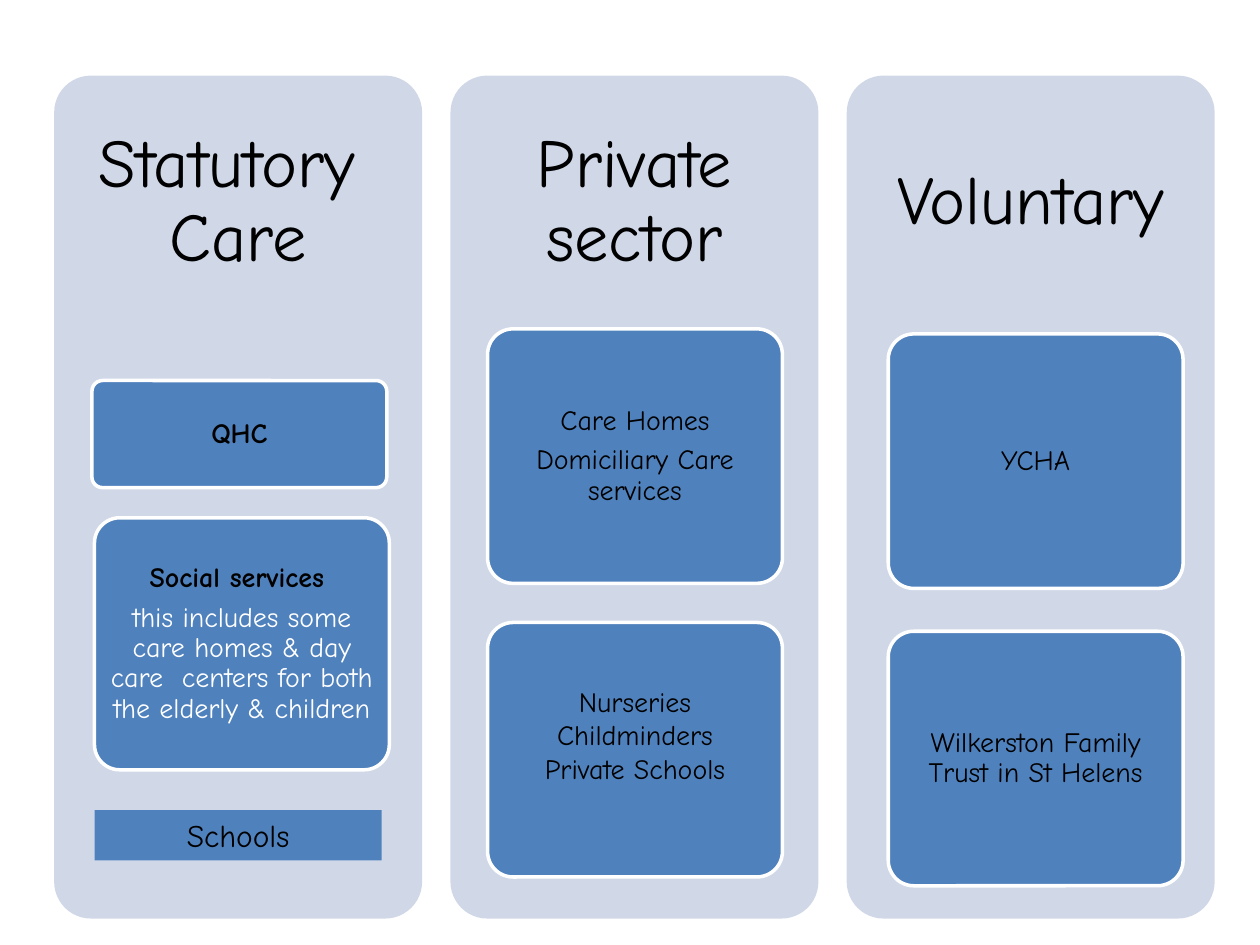
"""Build a slide that compares statutory, private and voluntary care providers."""
import pptx
import pptx.dml.color
import pptx.enum.shapes
import pptx.enum.text
import pptx.util

Inches, Pt = pptx.util.Inches, pptx.util.Pt
RGBColor = pptx.dml.color.RGBColor
SHAPES = pptx.enum.shapes.MSO_SHAPE
PANEL = RGBColor(0xD0, 0xD8, 0xE8)
CARD = RGBColor(0x4F, 0x81, 0xBD)
BLACK = RGBColor(0, 0, 0)
WHITE = RGBColor(0xFF, 0xFF, 0xFF)

FONT = "Comic Neue"
PANEL_TOP, PANEL_WIDTH, PANEL_HEIGHT, TITLE_HEIGHT = 0.6, 2.92, 6.69, 2.01
FIRST_PANEL, LAST_PANEL = 0.43, 6.72
CARD_WIDTH = 2.34

TIGHT = {"line_spacing": 0.9, "space_after": Pt(5.5)}
PLAIN = {"size": Pt(16), "bold": False}
BOLD = {"size": Pt(16), "bold": True}
TITLE = {"size": Pt(39)}
SMALL_INSETS = {"margin_left": Inches(0.04), "margin_right": Inches(0.04),
                "margin_top": Inches(0.03), "margin_bottom": Inches(0.03)}
RAISED_INSETS = {**SMALL_INSETS, "margin_bottom": Inches(0.27)}
TITLE_INSETS = dict.fromkeys(SMALL_INSETS, Inches(0.16))

SECTORS = [
    ("Statutory  Care", [
        (0.73, 3.02, 0.85, SMALL_INSETS, TIGHT, [("QHC", BLACK, BOLD)]),
        (0.75, 4.11, 2, SMALL_INSETS, TIGHT, [
            ("Social services ", BLACK, BOLD),
            ("this includes some care homes & day care  centers for both "
             "the elderly & children", WHITE, PLAIN)]),
    ]),
    ("Private sector", [
        (3.87, 2.61, 2.02, SMALL_INSETS, TIGHT, [
            ("Care Homes", BLACK, PLAIN),
            ("Domiciliary Care services", BLACK, PLAIN)]),
        (3.87, 4.94, 2.02, RAISED_INSETS, {}, [
            ("Nurseries", BLACK, PLAIN),
            ("Childminders", BLACK, PLAIN),
            ("Private Schools", BLACK, PLAIN)]),
    ]),
    ("Voluntary", [
        (7.05, 2.65, 2.02, SMALL_INSETS, TIGHT, [("YCHA", BLACK, PLAIN)]),
        (7.05, 5.01, 2.02, SMALL_INSETS, TIGHT, [
            ("Wilkerston Family Trust in St Helens", BLACK, PLAIN)]),
    ]),
]
SCHOOLS = ("Schools", BLACK, {"size": Pt(18)})


def apply(target, values):
    for name, value in values.items():
        setattr(target, name, value)


def add_block(slide, preset, box, fill, outlined=False):
    block = slide.shapes.add_shape(preset, *map(Inches, box))
    block.shadow.inherit = False
    block.fill.solid()
    block.fill.fore_color.rgb = fill
    if preset == SHAPES.ROUNDED_RECTANGLE:
        block.adjustments[0] = 0.1
    if outlined:
        block.line.color.rgb = WHITE
        block.line.width = Pt(2)
    else:
        block.line.fill.background()
    return block


def write(shape, lines, insets, spacing):
    frame = shape.text_frame
    apply(frame, {"word_wrap": True,
                  "vertical_anchor": pptx.enum.text.MSO_ANCHOR.MIDDLE, **insets})
    for index, (words, color, style) in enumerate(lines):
        paragraph = frame.add_paragraph() if index else frame.paragraphs[0]
        apply(paragraph, {"alignment": pptx.enum.text.PP_ALIGN.CENTER, **spacing})
        run = paragraph.add_run()
        run.text = words
        apply(run.font, {"name": FONT, **style})
        run.font.color.rgb = color


def main():
    deck = pptx.Presentation()
    deck.slide_width, deck.slide_height = Inches(10), Inches(7.5)
    slide = deck.slides.add_slide(deck.slide_layouts[6])
    pitch = (LAST_PANEL - FIRST_PANEL) / (len(SECTORS) - 1)

    for index, (title, cards) in enumerate(SECTORS):
        left = FIRST_PANEL + index * pitch
        add_block(slide, SHAPES.ROUNDED_RECTANGLE,
                  (left, PANEL_TOP, PANEL_WIDTH, PANEL_HEIGHT), PANEL)
        heading = slide.shapes.add_textbox(
            *map(Inches, (left, PANEL_TOP, PANEL_WIDTH, TITLE_HEIGHT)))
        write(heading, [(title, BLACK, TITLE)], TITLE_INSETS, TIGHT)
        for card_left, top, height, insets, spacing, lines in cards:
            card = add_block(slide, SHAPES.ROUNDED_RECTANGLE,
                             (card_left, top, CARD_WIDTH, height), CARD, True)
            write(card, lines, insets, spacing)

    schools = add_block(slide, SHAPES.RECTANGLE, (0.75, 6.43, 2.28, 0.4), CARD)
    write(schools, [SCHOOLS], {}, {})
    deck.save("out.pptx")


if __name__ == "__main__":
    main()
